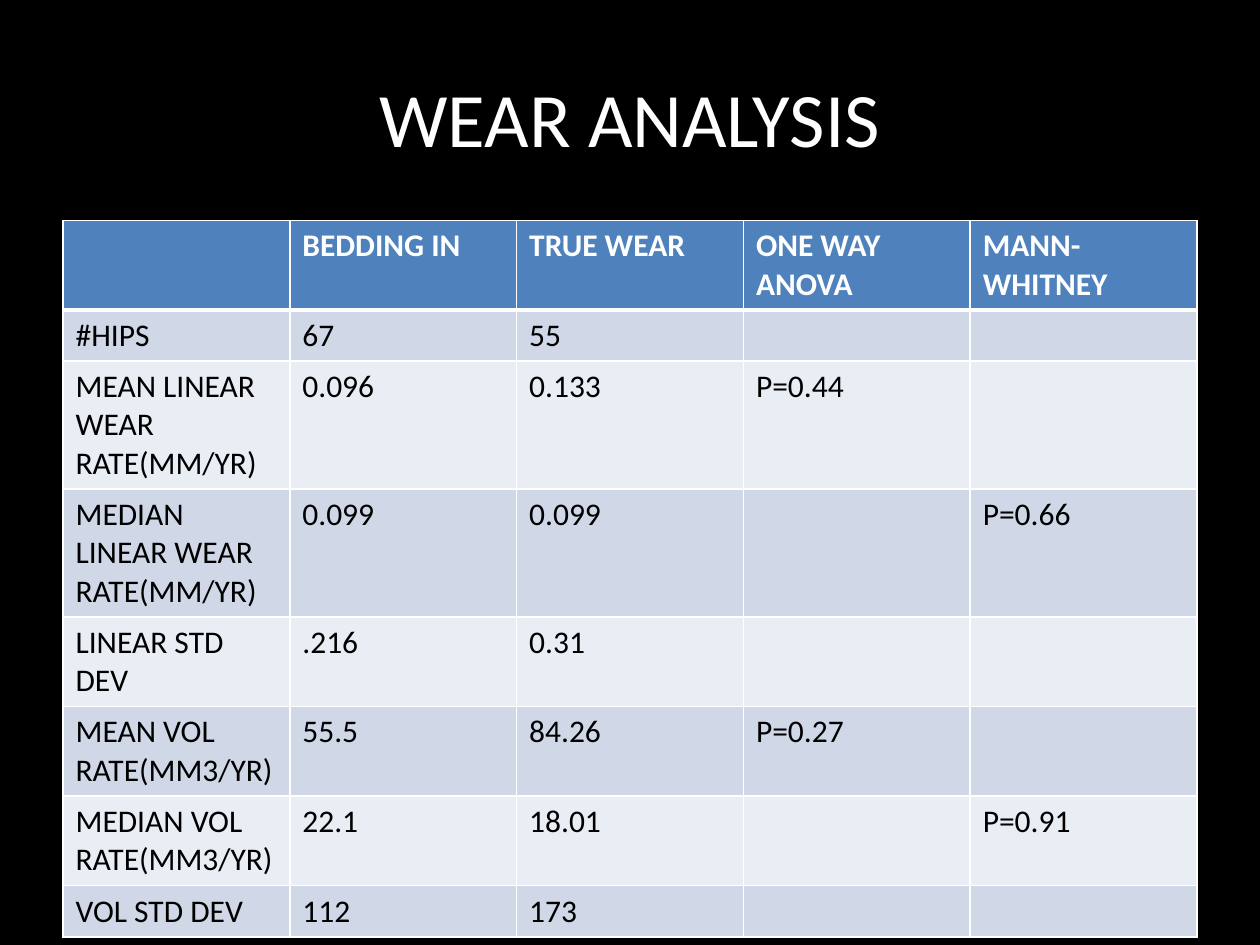
from dataclasses import dataclass

from lxml.etree import SubElement
from pptx import Presentation
from pptx.dml.color import RGBColor
from pptx.enum.text import MSO_ANCHOR, PP_ALIGN
from pptx.oxml.ns import qn
from pptx.util import Pt


@dataclass(frozen=True)
class Theme:
    font: str = "Calibri"
    background: str = "000000"
    light: str = "FFFFFF"
    dark: str = "000000"
    header: str = "4F81BD"
    bands: tuple = ("D0D8E8", "E9EDF4")
    title_size: int = 44
    body_size: int = 18
    border: int = 1
    header_border: int = 3


ROWS = [
    ["", "BEDDING IN", "TRUE WEAR", "ONE WAY ANOVA", "MANN-WHITNEY"],
    ["#HIPS", "67", "55", "", ""],
    ["MEAN LINEAR WEAR RATE(MM/YR)", "0.096", "0.133", "P=0.44", ""],
    ["MEDIAN LINEAR WEAR RATE(MM/YR)", "0.099", "0.099", "", "P=0.66"],
    ["LINEAR STD DEV", ".216", "0.31", "", ""],
    ["MEAN VOL RATE(MM3/YR)", "55.5", "84.26", "P=0.27", ""],
    ["MEDIAN VOL RATE(MM3/YR)", "22.1", "18.01", "", "P=0.91"],
    ["VOL STD DEV", "112", "173", "", ""],
]


def write_text(frame, text, *, font, size, color, bold=False, align=PP_ALIGN.LEFT):
    paragraph = frame.paragraphs[0]
    paragraph.alignment = align
    paragraph.font.size = Pt(size)
    if text:
        run = paragraph.add_run()
        run.text = text
        run.font.name = font
        run.font.size = Pt(size)
        run.font.bold = bold
        run.font.color.rgb = RGBColor.from_string(color)


class SlideBuilder:
    def __init__(self, slide, theme):
        self.slide = slide
        self.theme = theme

    def background(self):
        fill = self.slide.background.fill
        fill.solid()
        fill.fore_color.rgb = RGBColor.from_string(self.theme.background)

    def title(self, text, left, top, width, height):
        shape = self.slide.shapes.title
        shape.left, shape.top = Pt(left), Pt(top)
        shape.width, shape.height = Pt(width), Pt(height)
        shape.text_frame.vertical_anchor = MSO_ANCHOR.MIDDLE
        write_text(shape.text_frame, text, font=self.theme.font,
                   size=self.theme.title_size, color=self.theme.light,
                   align=PP_ALIGN.CENTER)

    def borders(self, cell, top, bottom):
        properties = cell._tc.get_or_add_tcPr()
        side = self.theme.border
        for name, width in (("L", side), ("R", side), ("T", top), ("B", bottom)):
            line = SubElement(properties, qn(f"a:ln{name}"), w=str(Pt(width)))
            fill = SubElement(line, qn("a:solidFill"))
            SubElement(fill, qn("a:srgbClr"), val=self.theme.light)

    def table(self, rows, left, top, width, row_height):
        theme = self.theme
        frame = self.slide.shapes.add_table(
            len(rows), len(rows[0]), Pt(left), Pt(top),
            Pt(width), Pt(row_height * len(rows)))
        for row_index, row in enumerate(rows):
            is_header = row_index == 0
            fill = theme.header if is_header else theme.bands[(row_index - 1) % 2]
            upper = theme.header_border if row_index == 1 else theme.border
            lower = theme.header_border if is_header else theme.border
            for column_index, text in enumerate(row):
                cell = frame.table.cell(row_index, column_index)
                self.borders(cell, upper, lower)
                cell.fill.solid()
                cell.fill.fore_color.rgb = RGBColor.from_string(fill)
                write_text(cell.text_frame, text, font=theme.font,
                           size=theme.body_size, bold=is_header,
                           color=theme.light if is_header else theme.dark)


def main():
    presentation = Presentation()
    presentation.slide_width, presentation.slide_height = Pt(720), Pt(540)
    slide = presentation.slides.add_slide(presentation.slide_layouts[5])
    builder = SlideBuilder(slide, Theme())
    builder.background()
    builder.title("WEAR ANALYSIS", 36, 21.6, 648, 90)
    builder.table(ROWS, 36, 126, 648, 29.2)
    presentation.save("out.pptx")


if __name__ == "__main__":
    main()
